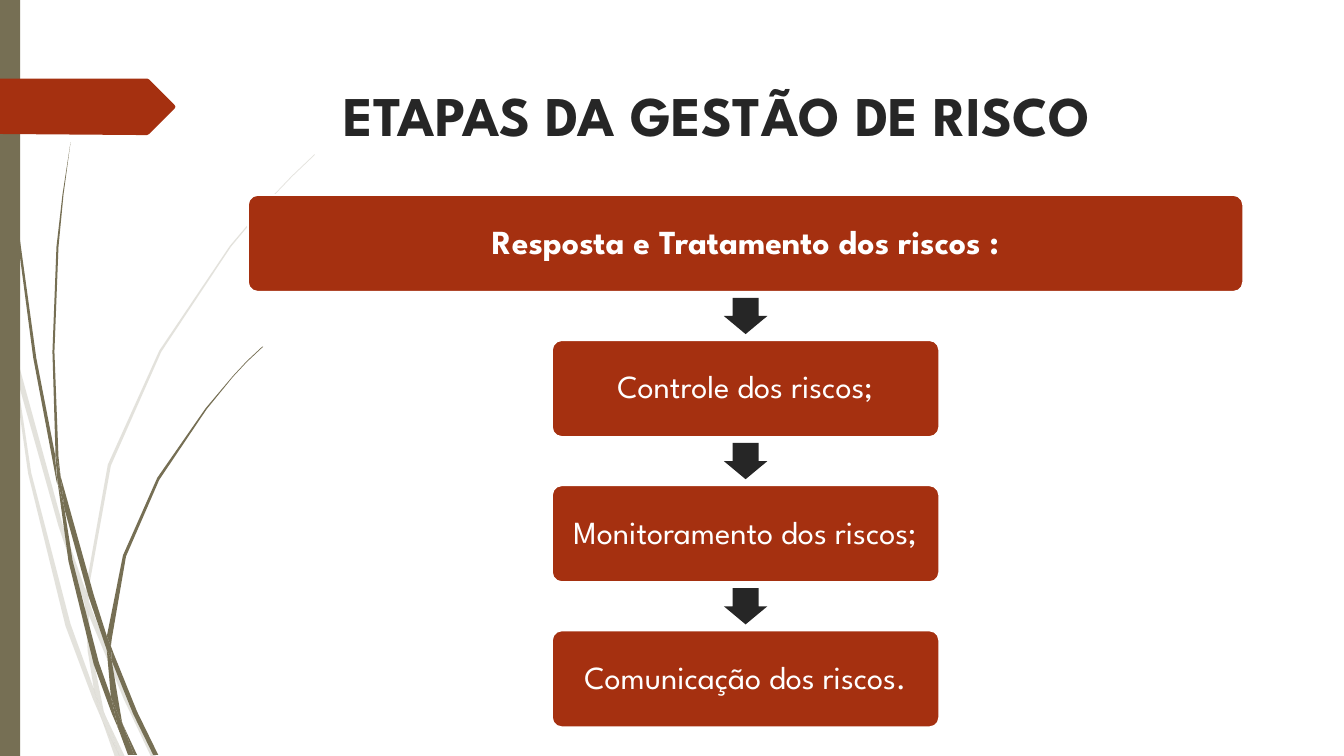
from collections import namedtuple

from lxml.etree import SubElement
from pptx import Presentation
from pptx.dml.color import RGBColor
from pptx.enum.shapes import MSO_SHAPE
from pptx.enum.text import MSO_ANCHOR, PP_ALIGN
from pptx.oxml.ns import qn
from pptx.util import Inches, Pt

Box = namedtuple("Box", "left top width height")
UNITS_PER_INCH = 100
FONT = "League Spartan"
OLIVE, RUST, INK, WHITE = "766F54", "A53010", "262626", "FFFFFF"

PALE_BLADES = [
    [(11, 350), (9, 322), (0, 282), (0, 299), (10, 344)],
    [(58, 522), (84, 599), (85, 586), (62, 520), (14, 345), (17, 376)],
    [(92, 607), (88, 596), (88, 610), (123, 694), (150, 751), (155, 751), (127, 692)],
    [(119, 751), (124, 751), (105, 711)],
    [(93, 683), (70, 619), (31, 469), (17, 376), (11, 350), (28, 470), (65, 621),
     (92, 693), (101, 714), (99, 707)],
    [(84, 599), (87, 646), (93, 683), (96, 692), (105, 711), (103, 706), (91, 646),
     (88, 610), (88, 608)],
    [(88, 584), (110, 462), (160, 349), (229, 245), (268, 198), (290, 175), (312, 154),
     (312, 153), (289, 175), (268, 197), (228, 244), (158, 348), (107, 461), (85, 584),
     (85, 586), (88, 596)],
    [(101, 714), (114, 751), (119, 751)],
    [(88, 608), (88, 610), (88, 596), (85, 586), (84, 599)],
    [(96, 692), (93, 683), (99, 707), (101, 714), (119, 751), (105, 711)],
]
OLIVE_BLADES = [
    [(7, 110), (17, 233), (33, 355), (56, 477), (57, 481), (55, 457), (55, 453),
     (36, 355), (19, 232), (8, 109), (5, 48), (4, 0), (3, 0), (4, 48)],
    [(88, 592), (106, 645), (106, 633), (106, 631), (93, 590), (60, 472), (64, 505)],
    [(113, 649), (110, 641), (111, 656), (132, 708), (152, 749), (157, 749), (136, 706)],
    [(110, 691), (98, 657), (72, 556), (64, 505), (57, 477), (68, 557), (93, 659),
     (111, 708), (117, 722), (116, 717)],
    [(60, 472), (58, 453), (54, 349), (58, 245), (63, 193), (70, 141), (62, 193),
     (56, 245), (52, 349), (55, 449)],
    [(133, 749), (136, 749), (122, 719)],
    [(57, 477), (64, 505), (60, 472), (55, 449), (55, 453)],
    [(111, 633), (125, 552), (158, 476), (205, 406), (231, 374), (245, 359), (261, 344),
     (260, 344), (245, 358), (231, 373), (204, 405), (156, 474), (122, 551), (106, 631),
     (110, 641)],
    [(117, 722), (127, 749), (131, 749)],
    [(106, 645), (110, 691), (116, 706), (122, 719), (121, 716), (111, 656), (109, 651)],
    [(106, 645), (109, 651), (111, 656), (110, 641), (106, 631), (106, 633)],
    [(116, 706), (110, 691), (116, 717), (117, 722), (130, 749), (133, 749), (122, 719)],
]
TAG_OUTLINE = [(0, 0), (146, 0), (148, 1), (173, 26), (174, 28),
               (173, 30), (148, 55), (146, 56), (136, 56), (0, 55)]


def units(length):
    return Inches(length / UNITS_PER_INCH)


def paint(part, fill, opacity=None, line=None):
    part.shadow.inherit = False
    part.fill.solid()
    part.fill.fore_color.rgb = RGBColor.from_string(fill)
    if opacity is not None:
        colour = part.fill._xPr.find(qn("a:solidFill"))[0]
        SubElement(colour, qn("a:alpha")).set("val", str(int(opacity * 100000)))
    if line:
        part.line.color.rgb = RGBColor.from_string(line)
        part.line.width = Pt(1.25)
    else:
        part.line.fill.background()


def add_preset(slide, preset, box, fill, line=None, adjustments=()):
    part = slide.shapes.add_shape(preset, *map(units, box))
    paint(part, fill, line=line)
    for index, value in enumerate(adjustments):
        part.adjustments[index] = value
    return part


def write(frame, wording, size, colour, bold):
    frame.word_wrap = True
    paragraph = frame.paragraphs[0]
    paragraph.alignment = PP_ALIGN.CENTER
    run = paragraph.add_run()
    run.text = wording
    run.font.name = FONT
    run.font.size = Pt(size)
    run.font.bold = bold
    run.font.color.rgb = RGBColor.from_string(colour)
    return paragraph


def add_outline(slide, box, points, fill, opacity=None):
    placed = [(units(box.left + x), units(box.top + y)) for x, y in points]
    builder = slide.shapes.build_freeform(*placed[0])
    builder.add_line_segments(placed[1:], close=True)
    paint(builder.convert_to_shape(), fill, opacity)


def draw_grass(slide, box):
    for blades, opacity in ((PALE_BLADES, 0.2), (OLIVE_BLADES, None)):
        for blade in blades:
            add_outline(slide, box, blade, OLIVE, opacity)


def draw_side_band(slide, box):
    add_preset(slide, MSO_SHAPE.RECTANGLE, box, OLIVE)


def draw_tag(slide, box):
    add_outline(slide, box, TAG_OUTLINE, RUST)


def draw_title(slide, box, wording):
    title = slide.shapes.add_textbox(*map(units, box))
    write(title.text_frame, wording, 40, INK, True)


def draw_flow(slide, box, heading, steps):
    stages = [heading, *steps]
    row = box.height / (3 * len(stages) - 1)
    centre = box.left + box.width / 2
    arrow_width, arrow_height = 0.9 * row, 0.75 * row
    for index, wording in enumerate(stages):
        is_heading = index == 0
        width = box.width if is_heading else 8 * row
        top = box.top + 3 * row * index
        stage = add_preset(slide, MSO_SHAPE.ROUNDED_RECTANGLE,
                           Box(centre - width / 2, top, width, 2 * row),
                           RUST, WHITE, [0.1])
        frame = stage.text_frame
        frame.vertical_anchor = MSO_ANCHOR.MIDDLE
        frame.margin_left = frame.margin_right = units(10)
        frame.margin_top = frame.margin_bottom = units(10)
        paragraph = write(frame, wording, 24 if is_heading else 23, WHITE, is_heading)
        paragraph.line_spacing = 0.9
        if index < len(stages) - 1:
            arrow_top = top + 2.5 * row - arrow_height / 2
            add_preset(slide, MSO_SHAPE.DOWN_ARROW,
                       Box(centre - arrow_width / 2, arrow_top, arrow_width, arrow_height),
                       INK, adjustments=[0.6, 0.5])


def main():
    deck = Presentation()
    deck.slide_width, deck.slide_height = units(1333), units(750)
    slide = deck.slides.add_slide(deck.slide_layouts[6])
    draw_grass(slide, Box(0, 0, 312, 750))
    draw_side_band(slide, Box(0, 0, 20, 750))
    draw_tag(slide, Box(0, 78, 174, 56))
    draw_title(slide, Box(204, 75, 1014, 98), "ETAPAS DA GESTÃO DE RISCO")
    draw_flow(slide, Box(246, 193.5, 987, 528), "Resposta e Tratamento dos riscos :",
              ["Controle dos riscos;", "Monitoramento dos riscos;", "Comunicação dos riscos."])
    deck.save("out.pptx")


if __name__ == "__main__":
    main()
